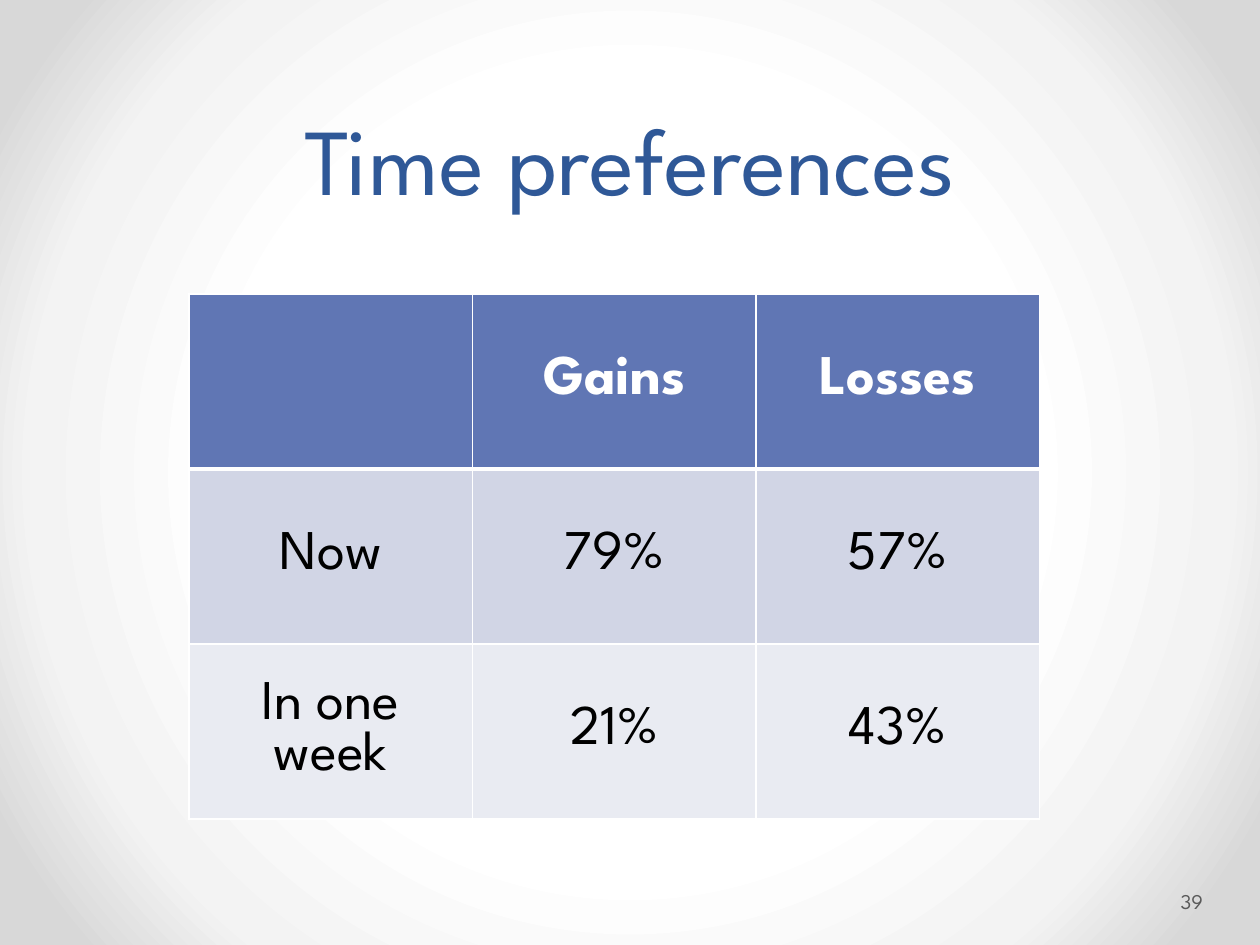
from dataclasses import dataclass

from lxml.etree import SubElement
from pptx import Presentation
from pptx.dml.color import RGBColor
from pptx.enum.text import MSO_ANCHOR, PP_ALIGN
from pptx.oxml import parse_xml
from pptx.oxml.ns import nsdecls, qn
from pptx.util import Pt


@dataclass(frozen=True)
class Theme:
    font: str = "League Spartan"
    title_color: str = "2F5897"
    number_color: str = "595959"
    header_text: str = "FFFFFF"
    body_text: str = "000000"
    border: str = "FFFFFF"
    row_fills: tuple = ("6076B4", "D1D5E5", "E9EBF2")
    background: tuple = ((0, "FFFFFF"), (50, "FFFFFF"), (76, "F3F3F3"),
                         (92, "D8D8D8"), (100, "D8D8D8"))
    title_size: int = 54
    table_size: int = 32
    number_size: int = 12


THEME = Theme()
ROWS = (
    ("", "Gains", "Losses"),
    ("Now", "79%", "57%"),
    ("In one week", "21%", "43%"),
)


def set_radial_background(slide):
    slide.background.fill.gradient()
    gradient = slide.element.find(".//" + qn("a:gradFill"))
    for child in list(gradient):
        gradient.remove(child)
    stops = SubElement(gradient, qn("a:gsLst"))
    for position, color in THEME.background:
        stop = SubElement(stops, qn("a:gs"), pos=str(position * 1000))
        SubElement(stop, qn("a:srgbClr"), val=color)
    circle = SubElement(gradient, qn("a:path"), path="circle")
    center = dict.fromkeys("ltrb", "50000")
    SubElement(circle, qn("a:fillToRect"), **center)


def format_text(text_frame, size, color, alignment, bold=False):
    for paragraph in text_frame.paragraphs:
        paragraph.alignment = alignment
        for run in paragraph.runs:
            run.font.name = THEME.font
            run.font.size = Pt(size)
            run.font.bold = bold
            run.font.color.rgb = RGBColor.from_string(color)


def add_text(slide, text, box, size, color, alignment, anchor):
    text_frame = slide.shapes.add_textbox(*map(Pt, box)).text_frame
    text_frame.word_wrap = True
    text_frame.vertical_anchor = anchor
    text_frame.text = text
    format_text(text_frame, size, color, alignment)
    return text_frame


def set_borders(cell, **widths):
    """Draw the borders L, R, T and B with the given widths in points."""
    properties = cell._tc.get_or_add_tcPr()
    for index, side in enumerate("LRTB"):
        line = parse_xml(
            f'<a:ln{side} {nsdecls("a")} w="{Pt(widths.get(side, 1))}">'
            f'<a:solidFill><a:srgbClr val="{THEME.border}"/></a:solidFill>'
            f'</a:ln{side}>')
        properties.insert(index, line)


def add_preference_table(slide):
    column_width, row_height = 162, 100
    column_count = len(ROWS[0])
    frame = slide.shapes.add_table(
        len(ROWS), column_count, Pt(108), Pt(168),
        Pt(column_width * column_count), Pt(row_height * len(ROWS)))
    table = frame.table
    for column in table.columns:
        column.width = Pt(column_width)
    for row_index, values in enumerate(ROWS):
        table.rows[row_index].height = Pt(row_height)
        is_header = row_index == 0
        color = THEME.header_text if is_header else THEME.body_text
        for column_index, value in enumerate(values):
            cell = table.cell(row_index, column_index)
            cell.text = value
            cell.vertical_anchor = MSO_ANCHOR.MIDDLE
            cell.fill.solid()
            cell.fill.fore_color.rgb = RGBColor.from_string(THEME.row_fills[row_index])
            format_text(cell.text_frame, THEME.table_size, color,
                        PP_ALIGN.CENTER, bold=is_header)
            set_borders(cell, T=3 if row_index == 1 else 1, B=3 if is_header else 1)


def main():
    presentation = Presentation()
    presentation.slide_width, presentation.slide_height = Pt(720), Pt(540)
    slide = presentation.slides.add_slide(presentation.slide_layouts[6])
    set_radial_background(slide)
    title = add_text(slide, "Time preferences", (36, 0, 648, 126), THEME.title_size,
                     THEME.title_color, PP_ALIGN.CENTER, MSO_ANCHOR.BOTTOM)
    title.paragraphs[0].line_spacing = 1.07
    number = add_text(slide, "39", (672.5, 500.4, 44, 28.8), THEME.number_size,
                      THEME.number_color, PP_ALIGN.LEFT, MSO_ANCHOR.MIDDLE)
    number.margin_left, number.margin_right = Pt(2.2), Pt(3.6)
    add_preference_table(slide)
    presentation.save("out.pptx")


if __name__ == "__main__":
    main()
